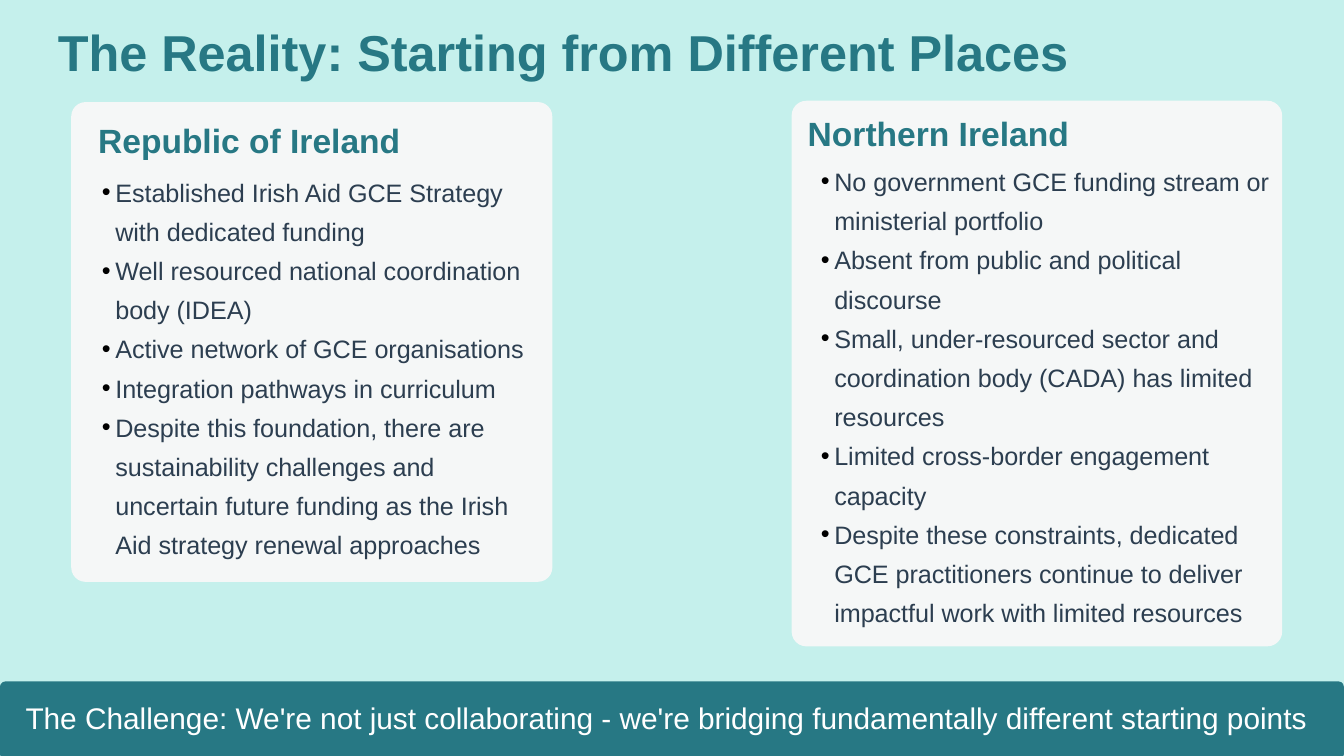
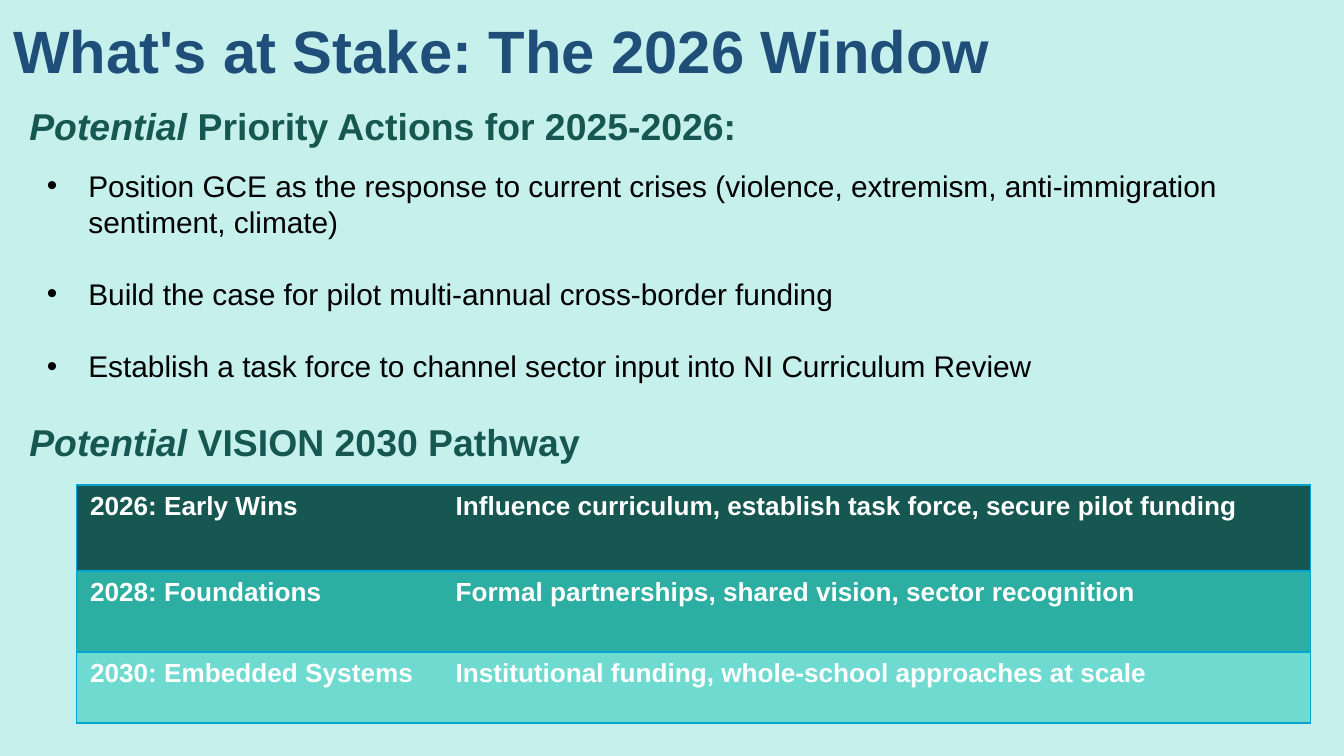
from dataclasses import dataclass

from lxml import etree
from pptx import Presentation
from pptx.dml.color import RGBColor
from pptx.enum.shapes import MSO_SHAPE
from pptx.enum.text import MSO_ANCHOR, MSO_AUTO_SIZE, PP_ALIGN
from pptx.oxml.ns import qn
from pptx.util import Inches, Pt

ROUNDED = MSO_SHAPE.ROUNDED_RECTANGLE
TOP = MSO_ANCHOR.TOP
LEFT = PP_ALIGN.LEFT
NO_AUTOFIT = MSO_AUTO_SIZE.NONE
TITLE_ONLY = 5


@dataclass(frozen=True)
class Theme:
    font: str = "Arial"
    page: str = "C5F0EC"
    teal: str = "277884"
    card: str = "F5F7F7"
    body: str = "2C3E50"
    navy: str = "1F4E79"
    green: str = "165751"
    sea: str = "2DAEA2"
    mint: str = "6EDAD0"
    border: str = "08A4D1"
    white: str = "FFFFFF"
    black: str = "000000"
    title: float = 27
    big_title: float = 32
    section: float = 20
    heading: float = 18
    text: float = 16
    cell: float = 14
    listing: float = 13.5


THEME = Theme()
NO_INSETS = (0, 0, 0, 0)
LIST_INSETS = (0.1, 0, 0, 0)
DEFAULT_INSETS = (0.1, 0.05, 0.1, 0.05)


@dataclass(frozen=True)
class Box:
    left: float
    top: float
    width: float
    height: float

    def inner(self, left, top, width, height):
        return Box(self.left + left, self.top + top, width, height)

    def lengths(self):
        return [Inches(n) for n in (self.left, self.top, self.width, self.height)]


# Shared text and shape helpers
def style(size, color, **extra):
    return {"size": Pt(size), "name": THEME.font, "color": color, **extra}


def add_span(para, text, look):
    span = para.add_run()
    span.text = text
    for name, value in look.items():
        if name == "color":
            span.font.color.rgb = RGBColor.from_string(value)
        else:
            setattr(span.font, name, value)


def prepare_frame(frame, insets):
    sides = ("left", "top", "right", "bottom")
    layout = {f"margin_{side}": Inches(n) for side, n in zip(sides, insets)}
    layout.update(word_wrap=True, auto_size=NO_AUTOFIT, vertical_anchor=TOP)
    for name, value in layout.items():
        setattr(frame, name, value)


def format_para(para, **values):
    for name, value in {"alignment": LEFT, **values}.items():
        setattr(para, name, value)


def add_text(page, box, spans, insets=NO_INSETS, **para_format):
    frame = page.shapes.add_textbox(*box.lengths()).text_frame
    prepare_frame(frame, insets)
    para = frame.paragraphs[0]
    format_para(para, **para_format)
    for text, look in spans:
        add_span(para, text, look)


def add_bullet(para, indent):
    props = para._p.get_or_add_pPr()
    props.set("marL", str(Inches(indent)))
    props.set("indent", str(-Inches(indent)))
    color = etree.SubElement(props, qn("a:buClr"))
    etree.SubElement(color, qn("a:srgbClr"), val=THEME.black)
    etree.SubElement(props, qn("a:buFont"), typeface=THEME.font)
    etree.SubElement(props, qn("a:buChar"), char="•")


def add_bullets(page, box, items, look, indent, insets, **para_format):
    frame = page.shapes.add_textbox(*box.lengths()).text_frame
    prepare_frame(frame, insets)
    for index, item in enumerate(items):
        para = frame.add_paragraph() if index else frame.paragraphs[0]
        format_para(para, **para_format)
        add_bullet(para, indent)
        add_span(para, item, look)


def add_panel(page, box, fill, rounding):
    panel = page.shapes.add_shape(ROUNDED, *box.lengths())
    panel.shadow.inherit = False
    panel.adjustments[0] = rounding
    panel.fill.solid()
    panel.fill.fore_color.rgb = RGBColor.from_string(fill)
    panel.line.fill.background()


def add_page(deck, title, box, look, insets, **para_format):
    page = deck.slides.add_slide(deck.slide_layouts[TITLE_ONLY])
    page.background.fill.solid()
    page.background.fill.fore_color.rgb = RGBColor.from_string(THEME.page)
    holder = page.shapes.title
    for name, value in zip(("left", "top", "width", "height"), box.lengths()):
        setattr(holder, name, value)
    prepare_frame(holder.text_frame, insets)
    para = holder.text_frame.paragraphs[0]
    format_para(para, **para_format)
    add_span(para, title, look)
    return page


# Comparison slide
def add_region_card(page, box, heading, heading_at, items, list_box):
    add_panel(page, box, THEME.card, 0.03)
    add_text(page, box.inner(*heading_at, 2.38, 0.33),
             [(heading, style(THEME.heading, THEME.teal, bold=True))],
             line_spacing=Pt(24), space_after=Pt(12))
    add_bullets(page, box.inner(*list_box), items,
                style(THEME.listing, THEME.body), 0.1, LIST_INSETS,
                line_spacing=Pt(21))


def add_challenge_band(page, box, text):
    add_panel(page, box, THEME.teal, 0.07)
    add_text(page, box.inner(0.19, 0.14, 9.8, 0.24),
             [(text, style(THEME.text, THEME.white))])


def build_reality(deck):
    page = add_page(deck, "The Reality: Starting from Different Places",
                    Box(0.43, 0.19, 7.68, 0.42),
                    style(THEME.title, THEME.teal, bold=True), NO_INSETS,
                    line_spacing=Pt(30), space_after=Pt(18))
    add_region_card(page, Box(0.53, 0.76, 3.58, 3.57),
                    "Republic of Ireland", (0.2, 0.1), [
        "Established Irish Aid GCE Strategy with dedicated funding",
        "Well resourced national coordination body (IDEA)",
        "Active network of GCE organisations",
        "Integration pathways in curriculum",
        "Despite this foundation, there are sustainability challenges and "
        "uncertain future funding as the Irish Aid strategy renewal approaches",
    ], (0.13, 0.49, 3.32, 3.03))
    add_region_card(page, Box(5.89, 0.75, 3.65, 4.06),
                    "Northern Ireland", (0.12, 0.06), [
        "No government GCE funding stream or ministerial portfolio",
        "Absent from public and political discourse",
        "Small, under-resourced sector and coordination body (CADA) has "
        "limited resources",
        "Limited cross-border engagement capacity",
        "Despite these constraints, dedicated GCE practitioners continue to "
        "deliver impactful work with limited resources",
    ], (0.12, 0.42, 3.47, 2.75))
    add_challenge_band(page, Box(0, 5.07, 10, 0.58),
                       "The Challenge: We're not just collaborating - we're "
                       "bridging fundamentally different starting points")


# Priorities and pathway slide
def add_section_heading(page, box, text):
    look = style(THEME.section, THEME.green, bold=True)
    add_text(page, box, [("Potential ", {**look, "italic": True}), (text, look)],
             DEFAULT_INSETS)


def set_cell_borders(cell, hidden_side):
    props = cell._tc.get_or_add_tcPr()
    for index, side in enumerate("LRTB"):
        line = etree.Element(qn(f"a:ln{side}"), w=str(Pt(1)))
        if side == hidden_side:
            etree.SubElement(line, qn("a:noFill"))
        else:
            fill = etree.SubElement(line, qn("a:solidFill"))
            etree.SubElement(fill, qn("a:srgbClr"), val=THEME.border)
        props.insert(index, line)


def add_pathway_table(page, box, rows, widths, heights):
    table = page.shapes.add_table(len(rows), len(widths), *box.lengths()).table
    table.first_row = table.horz_banding = False
    for column, width in zip(table.columns, widths):
        column.width = Inches(width)
    look = style(THEME.cell, THEME.white, bold=True)
    for row, height, (fill, *texts) in zip(table.rows, heights, rows):
        row.height = Inches(height)
        for cell, text, hidden_side in zip(row.cells, texts, "RL"):
            cell.fill.solid()
            cell.fill.fore_color.rgb = RGBColor.from_string(fill)
            set_cell_borders(cell, hidden_side)
            add_span(cell.text_frame.paragraphs[0], text, look)


def build_stake(deck):
    page = add_page(deck, "What's at Stake: The 2026 Window", Box(0, 0.05, 9, 1),
                    style(THEME.big_title, THEME.navy, bold=True),
                    DEFAULT_INSETS)
    add_section_heading(page, Box(0.12, 0.72, 8.5, 0.44),
                        "Priority Actions for 2025-2026:")
    add_bullets(page, Box(0.25, 1.2, 9.5, 1.94), [
        "Position GCE as the response to current crises (violence, extremism, "
        "anti-immigration sentiment, climate)",
        "Build the case for pilot multi-annual cross-border funding",
        "Establish a task force to channel sector input into NI Curriculum Review",
    ], style(THEME.text, THEME.black), 0.31, DEFAULT_INSETS, space_after=Pt(19.5))
    add_section_heading(page, Box(0.12, 3.07, 5.3, 0.44), "VISION 2030 Pathway")
    add_pathway_table(page, Box(0.57, 3.61, 9.18, 1.77), [
        (THEME.green, "2026: Early Wins",
         "Influence curriculum, establish task force, secure pilot funding"),
        (THEME.sea, "2028: Foundations",
         "Formal partnerships, shared vision, sector recognition"),
        (THEME.mint, "2030: Embedded Systems",
         "Institutional funding, whole-school approaches at scale"),
    ], (2.72, 6.46), (0.64, 0.6, 0.53))


def main():
    deck = Presentation()
    # Widescreen, 16 to 9
    deck.slide_width = Inches(10)
    deck.slide_height = Inches(10) * 9 // 16
    build_reality(deck)
    build_stake(deck)
    deck.save("out.pptx")


if __name__ == "__main__":
    main()
